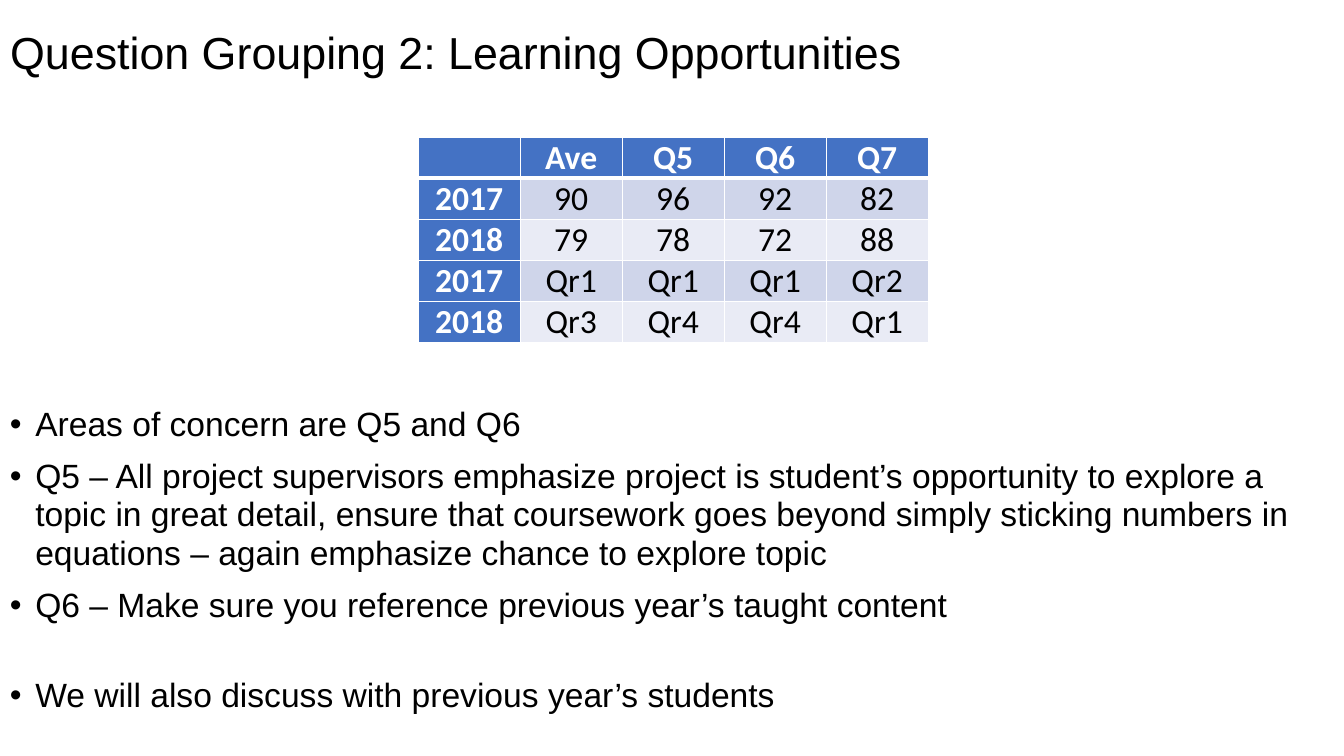
from lxml.etree import SubElement
from pptx import Presentation
from pptx.dml.color import RGBColor as RGB
from pptx.enum.text import MSO_ANCHOR as ANCHOR, PP_ALIGN as ALIGN
from pptx.oxml.ns import qn
from pptx.util import Cm, Pt

COLORS = {"text": "000000", "white": "FFFFFF", "head": "4472C4",
          "odd": "CFD5EA", "even": "E9EBF5"}
WIDTH = 33.87

SCORES = [
    ["", "Ave", "Q5", "Q6", "Q7"],
    ["2017", "90", "96", "92", "82"],
    ["2018", "79", "78", "72", "88"],
    ["2017", "Qr1", "Qr1", "Qr1", "Qr2"],
    ["2018", "Qr3", "Qr4", "Qr4", "Qr1"],
]
ACTIONS = [
    ("Areas of concern are Q5 and Q6", 0),
    ("Q5 – All project supervisors emphasize project is student’s opportunity "
     "to explore a topic in great detail, ensure that coursework goes beyond "
     "simply sticking numbers in equations – again emphasize chance to explore "
     "topic", 10),
    ("Q6 – Make sure you reference previous year’s taught content", 10),
    ("We will also discuss with previous year’s students", 37),
]


class Deck:
    font, table_font, size = "Arial", "Calibri", 24

    def __init__(self):
        self.prs = Presentation()
        self.prs.slide_width, self.prs.slide_height = Cm(WIDTH), Cm(19.05)
        self.s = self.prs.slides.add_slide(self.prs.slide_layouts[5])

    def style(self, p, font, size, color="text", bold=False):
        for r in p.runs:
            r.font.name, r.font.size, r.font.bold = font, Pt(size), bold
            r.font.color.rgb = RGB.from_string(COLORS[color])

    def title(self, text, height):
        sp = self.s.shapes.title
        sp.left, sp.top, sp.width, sp.height = Cm(0), Cm(0), Cm(WIDTH), Cm(height)
        tf = sp.text_frame
        tf.text = text
        tf.vertical_anchor = ANCHOR.MIDDLE
        p = tf.paragraphs[0]
        p.alignment, p.line_spacing = ALIGN.LEFT, 0.9
        self.style(p, self.font, 32)

    def borders(self, cell, widths):
        tc_pr = cell._tc.get_or_add_tcPr()
        for side, width in zip("LRTB", widths):
            ln = SubElement(tc_pr, qn(f"a:ln{side}"), w=str(Pt(width)))
            fill = SubElement(ln, qn("a:solidFill"))
            SubElement(fill, qn("a:srgbClr"), val=COLORS["white"])

    def table(self, rows, left, top, col_width, row_height):
        n, m = len(rows), len(rows[0])
        table = self.s.shapes.add_table(n, m, Cm(left), Cm(top), Cm(col_width * m),
                                        Cm(row_height * n)).table
        table.first_col = True
        for col in table.columns:
            col.width = Cm(col_width)
        for i, values in enumerate(rows):
            table.rows[i].height = Cm(row_height)
            for j, value in enumerate(values):
                self.cell(table.cell(i, j), value, i, j)

    def cell(self, cell, value, i, j):
        head = i == 0 or j == 0
        self.borders(cell, (1, 1, 3 if i == 1 else 1, 3 if i == 0 else 1))
        cell.fill.solid()
        fill = "head" if head else "odd" if i % 2 else "even"
        cell.fill.fore_color.rgb = RGB.from_string(COLORS[fill])
        cell.margin_left = cell.margin_right = Cm(0.18)
        cell.margin_top = cell.margin_bottom = Cm(0)
        cell.vertical_anchor = ANCHOR.BOTTOM
        p = cell.text_frame.paragraphs[0]
        p.text = value
        p.alignment = ALIGN.CENTER
        p.font.size = Pt(self.size)
        self.style(p, self.table_font, self.size, "white" if head else "text", head)

    def bullets(self, items, top, height):
        sp = self.s.shapes.add_textbox(Cm(0), Cm(top), Cm(WIDTH), Cm(height))
        tf = sp.text_frame
        tf.word_wrap = True
        for i, (text, before) in enumerate(items):
            p = tf.add_paragraph() if i else tf.paragraphs[0]
            p.text = text
            p.line_spacing, p.space_before = 0.95, Pt(before)
            p_pr = p._p.get_or_add_pPr()
            indent = Cm(0.64)
            p_pr.set("marL", str(indent))
            p_pr.set("indent", str(-indent))
            SubElement(p_pr, qn("a:buFont"), typeface=self.font)
            SubElement(p_pr, qn("a:buChar"), char="•")
            self.style(p, self.font, self.size)


def main():
    deck = Deck()
    deck.title("Question Grouping 2: Learning Opportunities", 2.77)
    deck.table(SCORES, 10.54, 3.46, 2.57, 1.03)
    deck.bullets(ACTIONS, 10.1, 7.88)
    deck.prs.save("out.pptx")


if __name__ == "__main__":
    main()
